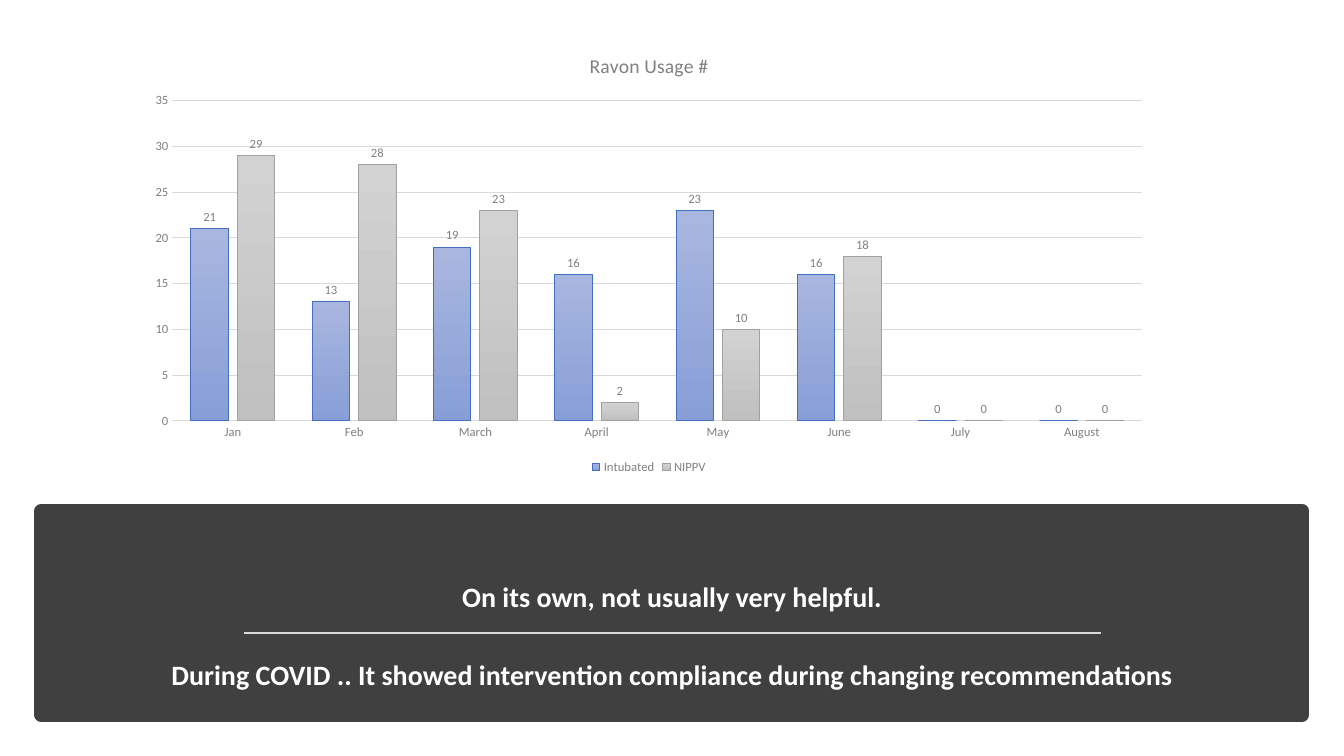
from dataclasses import dataclass

from lxml.etree import SubElement
from pptx import Presentation
from pptx.chart.data import CategoryChartData
from pptx.dml.color import RGBColor
from pptx.enum.chart import XL_CHART_TYPE, XL_LABEL_POSITION, XL_LEGEND_POSITION, XL_TICK_MARK
from pptx.enum.shapes import MSO_CONNECTOR, MSO_SHAPE
from pptx.enum.text import MSO_ANCHOR, PP_ALIGN
from pptx.oxml.ns import qn
from pptx.util import Cm, Pt


@dataclass(frozen=True)
class Theme:
    face: str = "Calibri"
    band: str = "404040"
    white: str = "FFFFFF"
    rule: str = "D9D9D9"
    gray: str = "808080"
    small: float = 9
    title: float = 14
    body: float = 20
    bars: tuple = (("A8B7DF", "889ED7", "436FC0"), ("D2D2D2", "C0C0C0", "A1A1A1"))


class Deck:
    def __init__(self, theme, slide):
        self.theme = theme
        self.slide = slide

    def font(self, font, size, color, bold=False):
        font.name = self.theme.face
        font.size = Pt(size)
        font.bold = bold
        font.color.rgb = RGBColor.from_string(color)

    def stroke(self, line, color, width):
        line.color.rgb = RGBColor.from_string(color)
        line.width = Pt(width)

    def band(self, box):
        shape = self.slide.shapes.add_shape(MSO_SHAPE.RECTANGLE, *map(Cm, box))
        shape.shadow.inherit = False
        shape.fill.solid()
        shape.fill.fore_color.rgb = RGBColor.from_string(self.theme.band)
        self.stroke(shape.line, self.theme.band, 10)

    def text(self, box, lines):
        frame = self.slide.shapes.add_textbox(*map(Cm, box)).text_frame
        frame.word_wrap = True
        frame.vertical_anchor = MSO_ANCHOR.BOTTOM
        for index, (words, after) in enumerate(lines):
            para = frame.add_paragraph() if index else frame.paragraphs[0]
            para.text = words
            para.alignment = PP_ALIGN.CENTER
            para.line_spacing = 0.9
            para.space_after = Pt(after)
            self.font(para.font, self.theme.body, self.theme.white, True)

    def rule(self, left, right, top):
        ends = map(Cm, (left, top, right, top))
        line = self.slide.shapes.add_connector(MSO_CONNECTOR.STRAIGHT, *ends)
        self.stroke(line.line, self.theme.rule, 1.75)
        SubElement(line._element.spPr, qn("a:effectLst"))

    def chart(self, box, title, months, series):
        theme = self.theme
        data = CategoryChartData()
        data.categories = months
        for name, values in series:
            data.add_series(name, values)
        frame = self.slide.shapes.add_chart(XL_CHART_TYPE.COLUMN_CLUSTERED, *map(Cm, box), data)
        chart = frame.chart
        self.font(chart.font, theme.small, theme.gray)

        chart.has_title = True
        head = chart.chart_title.text_frame
        head.text = title
        self.font(head.paragraphs[0].font, theme.title, theme.gray)
        chart.chart_title.include_in_layout = False

        chart.has_legend = True
        chart.legend.position = XL_LEGEND_POSITION.BOTTOM
        chart.legend.include_in_layout = False
        self.font(chart.legend.font, theme.small, theme.gray)

        for axis in (chart.category_axis, chart.value_axis):
            axis.major_tick_mark = axis.minor_tick_mark = XL_TICK_MARK.NONE
            self.font(axis.tick_labels.font, theme.small, theme.gray)
        self.stroke(chart.category_axis.format.line, theme.rule, 0.75)
        scale = chart.value_axis
        scale.minimum_scale, scale.maximum_scale, scale.major_unit = 0, 35, 5
        scale.format.line.fill.background()
        self.stroke(scale.major_gridlines.format.line, theme.rule, 0.75)

        plot = chart.plots[0]
        plot.vary_by_categories = False
        plot.gap_width = 100
        plot.overlap = -24
        for bar, (start, end, edge) in zip(plot.series, theme.bars):
            bar.invert_if_negative = False
            fill = bar.format.fill
            fill.gradient()
            fill.gradient_angle = 270
            for stop, color in zip(fill.gradient_stops, (start, end)):
                stop.color.rgb = RGBColor.from_string(color)
            self.stroke(bar.format.line, edge, 0.75)
            labels = bar.data_labels
            labels.show_value = True
            labels.position = XL_LABEL_POSITION.OUTSIDE_END
            self.font(labels.font, theme.small, theme.gray)


def main():
    show = Presentation()
    show.slide_width, show.slide_height = Cm(33.87), Cm(19.05)
    deck = Deck(Theme(), show.slides.add_slide(show.slide_layouts[6]))
    deck.band((1.04, 12.88, 31.78, 5.13))
    deck.text((1.47, 13.21, 30.94, 4.34), [
        ("On its own, not usually very helpful.", 34),
        ("During COVID .. It showed intervention compliance during changing recommendations", 6),
    ])
    deck.rule(6.15, 27.74, 15.95)
    deck.chart(
        (3.4, 0.86, 25.91, 11.2),
        "Ravon Usage #",
        ["Jan", "Feb", "March", "April", "May", "June", "July", "August"],
        [
            ("Intubated", (21, 13, 19, 16, 23, 16, 0, 0)),
            ("NIPPV", (29, 28, 23, 2, 10, 18, 0, 0)),
        ],
    )
    show.save("out.pptx")


if __name__ == "__main__":
    main()
